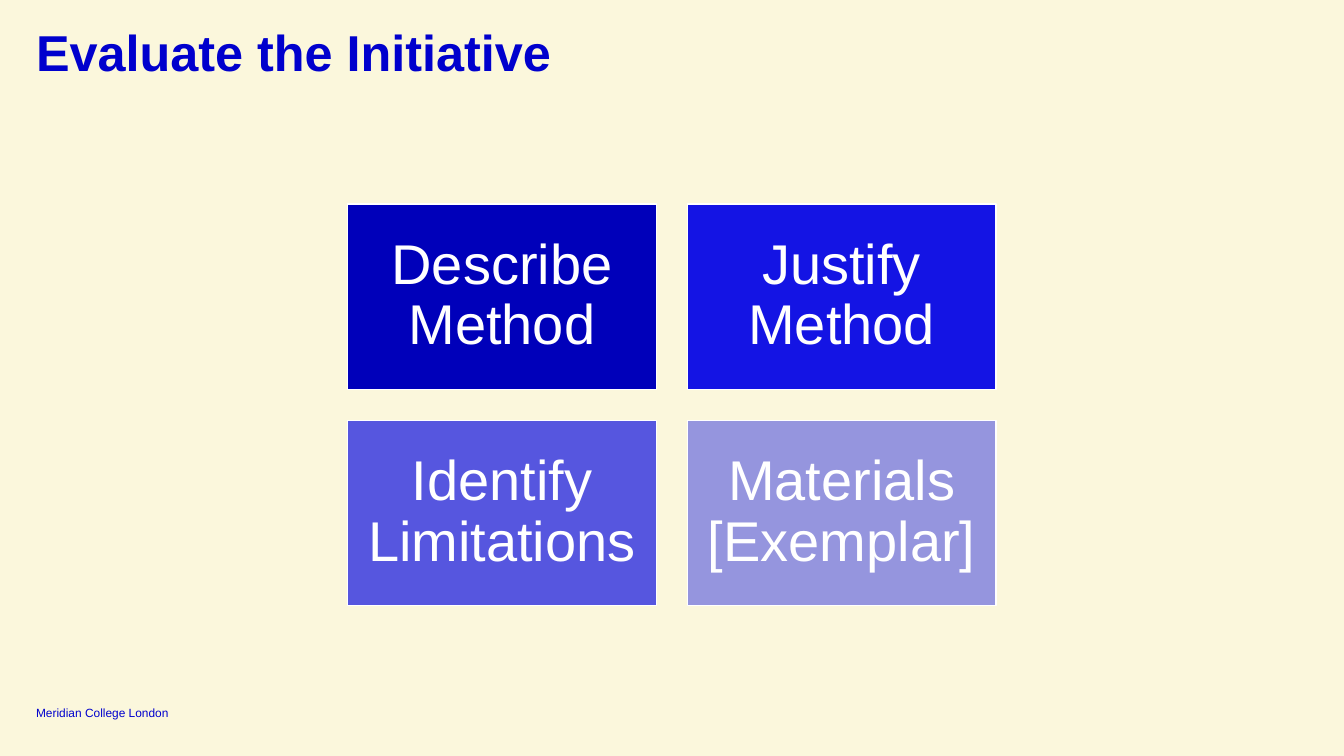
import pptx
import pptx.dml.color
import pptx.enum.shapes
import pptx.enum.text
import pptx.util

Cm = pptx.util.Cm
Pt = pptx.util.Pt
ALIGN = pptx.enum.text.PP_ALIGN
ANCHOR = pptx.enum.text.MSO_ANCHOR

COLOURS = {
    "cream": "FBF7DC",
    "blue": "0000CD",
    "white": "FFFFFF",
    "describe": "0000BA",
    "justify": "1414E4",
    "identify": "5656DF",
    "materials": "9595DE",
}


def colour(name):
    return pptx.dml.color.RGBColor.from_string(COLOURS[name])


class SlideBuilder:
    """Holds the text style and the slide being drawn."""

    font = "Arial"

    def __init__(self, slide):
        self.slide = slide

    def background(self, name):
        fill = self.slide.background.fill
        fill.solid()
        fill.fore_color.rgb = colour(name)

    def add_text(self, shape, text, size, colour_name, bold=False, inset=0,
                 anchor=ANCHOR.TOP, align=ALIGN.LEFT, line_spacing=1.0):
        frame = shape.text_frame
        frame.word_wrap = True
        frame.vertical_anchor = anchor
        frame.margin_left = frame.margin_right = Cm(inset)
        frame.margin_top = frame.margin_bottom = Cm(inset)
        paragraph = frame.paragraphs[0]
        paragraph.alignment = align
        paragraph.line_spacing = line_spacing
        run = paragraph.add_run()
        run.text = text
        run.font.name = self.font
        run.font.size = Pt(size)
        run.font.bold = bold
        run.font.color.rgb = colour(colour_name)

    def text_box(self, left, top, width, height, text, size, **style):
        box = self.slide.shapes.add_textbox(
            Cm(left), Cm(top), Cm(width), Cm(height))
        self.add_text(box, text, size, "blue", **style)

    def tile(self, left, top, width, height, text, fill):
        shape = self.slide.shapes.add_shape(
            pptx.enum.shapes.MSO_SHAPE.RECTANGLE,
            Cm(left), Cm(top), Cm(width), Cm(height))
        shape.shadow.inherit = False
        shape.fill.solid()
        shape.fill.fore_color.rgb = colour(fill)
        shape.line.color.rgb = colour("white")
        shape.line.width = Pt(1)
        self.add_text(shape, text, 40, "white", inset=0.43,
                      anchor=ANCHOR.MIDDLE, align=ALIGN.CENTER,
                      line_spacing=0.9)


def main():
    presentation = pptx.Presentation()
    presentation.slide_width = Cm(33.87)
    presentation.slide_height = Cm(19.05)
    slide = presentation.slides.add_slide(presentation.slide_layouts[6])
    builder = SlideBuilder(slide)
    builder.background("cream")

    # Footer and title
    builder.text_box(0.91, 17.75, 3.94, 0.38, "Meridian College London", 8.5,
                     anchor=ANCHOR.BOTTOM)
    builder.text_box(0.91, 0.71, 32.05, 1.04, "Evaluate the Initiative", 36,
                     bold=True, line_spacing=0.9)

    # Two-by-two grid of steps
    steps = [
        ("Describe Method", "describe"),
        ("Justify Method", "justify"),
        ("Identify Limitations", "identify"),
        ("Materials [Exemplar]", "materials"),
    ]
    width, height, gap = 7.78, 4.67, 0.78
    for index, (text, fill) in enumerate(steps):
        row, column = divmod(index, 2)
        builder.tile(8.76 + column * (width + gap), 5.14 + row * (height + gap),
                     width, height, text, fill)

    presentation.save("out.pptx")


if __name__ == "__main__":
    main()
